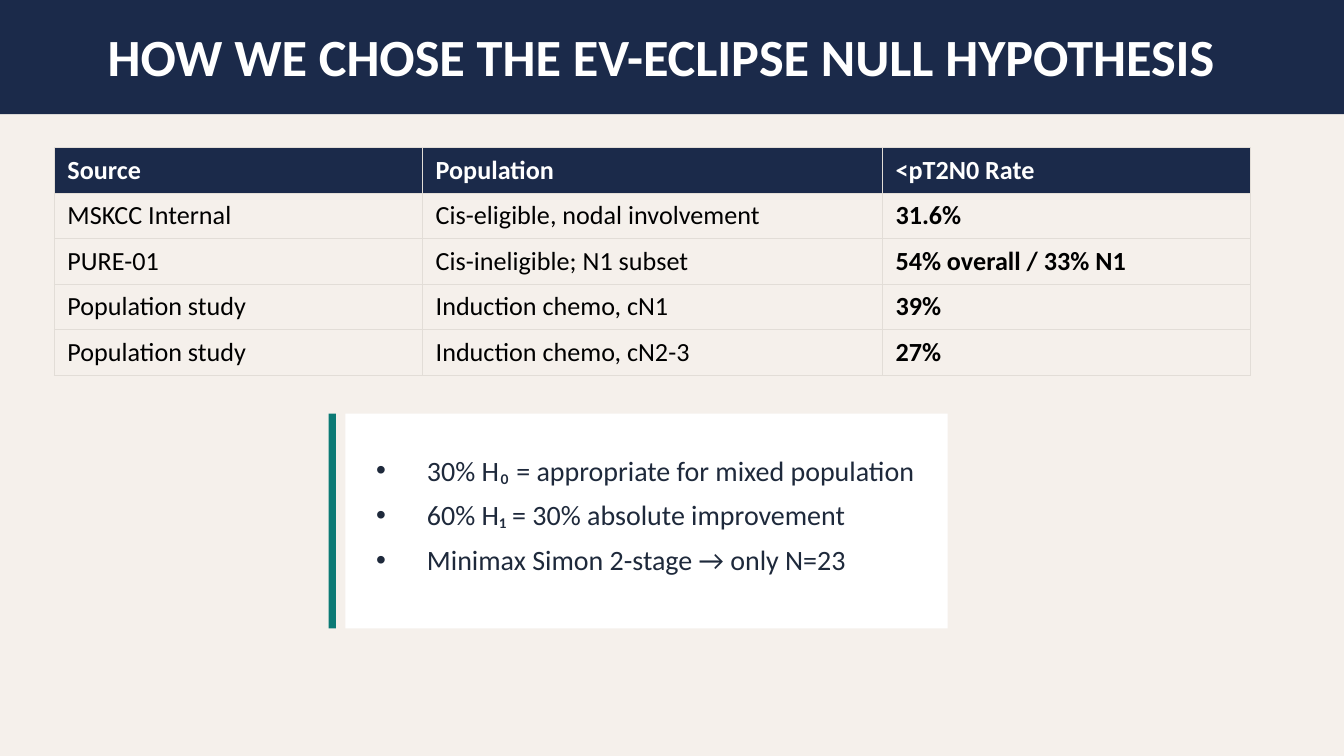
from lxml import etree
from pptx import Presentation, util as u
from pptx.dml.color import RGBColor
from pptx.enum import shapes, text
from pptx.oxml.ns import qn

THEME = {
    "font": "Calibri",
    "paper": "F5F0EB", "navy": "1B2A4A", "teal": "0B7A75", "white": "FFFFFF",
    "black": "000000", "slate": "1E293B", "rule": "E2DDD7",
    "title": 28, "table": 14, "takeaway": 15, "rule_width": 0.5,
}

HEADLINE = "HOW WE CHOSE THE EV-ECLIPSE NULL HYPOTHESIS"
HEADINGS = ("Source", "Population", "<pT2N0 Rate")
EVIDENCE = [
    ("MSKCC Internal", "Cis-eligible, nodal involvement", "31.6%"),
    ("PURE-01", "Cis-ineligible; N1 subset", "54% overall / 33% N1"),
    ("Population study", "Induction chemo, cN1", "39%"),
    ("Population study", "Induction chemo, cN2-3", "27%"),
]
TAKEAWAYS = [
    "30% H₀ = appropriate for mixed population",
    "60% H₁ = 30% absolute improvement",
    "Minimax Simon 2-stage → only N=23",
]

WIDTH, HEIGHT = 25.4, 14.29
COLUMNS = (6.96, 8.69, 6.96)
ROW = 0.86
CARD_TOP, CARD_HEIGHT = 7.82, 4.06


def colour(name):
    return RGBColor.from_string(THEME[name])


def place(*lengths):
    return [u.Cm(length) for length in lengths]


def write(paragraph, words, size, ink, bold=False):
    run = paragraph.add_run()
    run.text = words
    run.font.name = THEME["font"]
    run.font.size = u.Pt(THEME[size])
    run.font.bold = bold
    run.font.color.rgb = colour(ink)


def block(slide, box, fill):
    panel = slide.shapes.add_shape(shapes.MSO_SHAPE.RECTANGLE, *place(*box))
    panel.shadow.inherit = False
    panel.fill.solid()
    panel.fill.fore_color.rgb = colour(fill)
    panel.line.fill.background()
    return panel


def outline(cell):
    properties = cell._tc.get_or_add_tcPr()
    for position, side in enumerate(("a:lnL", "a:lnR", "a:lnT", "a:lnB")):
        edge = etree.Element(qn(side), w=str(u.Pt(THEME["rule_width"])))
        ink = etree.SubElement(edge, qn("a:solidFill"))
        etree.SubElement(ink, qn("a:srgbClr"), val=THEME["rule"])
        properties.insert(position, edge)


def add_bullet(paragraph, indent):
    properties = paragraph._p.get_or_add_pPr()
    properties.set("marL", str(u.Cm(indent)))
    properties.set("indent", str(-u.Cm(indent)))
    etree.SubElement(properties, qn("a:buFont"), typeface="Arial")
    etree.SubElement(properties, qn("a:buChar"), char="•")


def add_headline(slide):
    band = block(slide, (0, 0, WIDTH, 2.16), "navy")
    headline = slide.shapes.title
    band._element.addnext(headline._element)
    headline.left, headline.top, headline.width, headline.height = place(1.78, 0.3, 21.84, 1.52)
    frame = headline.text_frame
    frame.auto_size = text.MSO_AUTO_SIZE.NONE
    frame.vertical_anchor = text.MSO_ANCHOR.MIDDLE
    frame.paragraphs[0].alignment = text.PP_ALIGN.LEFT
    write(frame.paragraphs[0], HEADLINE, "title", "white", True)


def add_evidence(slide):
    rows = [HEADINGS] + EVIDENCE
    box = place(1.02, 2.79, sum(COLUMNS), ROW * len(rows))
    table = slide.shapes.add_table(len(rows), len(COLUMNS), *box).table
    table.horz_banding = False
    for column, width in zip(table.columns, COLUMNS):
        column.width = u.Cm(width)
    for r, row in enumerate(rows):
        table.rows[r].height = u.Cm(ROW)
        heading = r == 0
        for c, words in enumerate(row):
            cell = table.cell(r, c)
            if heading:
                cell.fill.solid()
                cell.fill.fore_color.rgb = colour("navy")
            else:
                cell.fill.background()
            outline(cell)
            rate = c == len(COLUMNS) - 1
            write(cell.text_frame.paragraphs[0], words, "table",
                  "white" if heading else "black", heading or rate)


def add_takeaways(slide):
    block(slide, (6.53, CARD_TOP, 11.38, CARD_HEIGHT), "white")
    block(slide, (6.21, CARD_TOP, 0.14, CARD_HEIGHT), "teal")
    frame = slide.shapes.add_textbox(*place(6.86, 8.08, 10.74, 3.3)).text_frame
    frame.word_wrap = True
    frame.vertical_anchor = text.MSO_ANCHOR.MIDDLE
    for i, words in enumerate(TAKEAWAYS):
        paragraph = frame.add_paragraph() if i else frame.paragraphs[0]
        add_bullet(paragraph, 0.96)
        paragraph.space_after = u.Pt(6)
        write(paragraph, words, "takeaway", "slate")


def main():
    deck = Presentation()
    deck.slide_width, deck.slide_height = place(WIDTH, HEIGHT)
    slide = deck.slides.add_slide(deck.slide_layouts[5])
    slide.background.fill.solid()
    slide.background.fill.fore_color.rgb = colour("paper")
    add_headline(slide)
    add_evidence(slide)
    add_takeaways(slide)
    deck.save("out.pptx")


if __name__ == "__main__":
    main()
